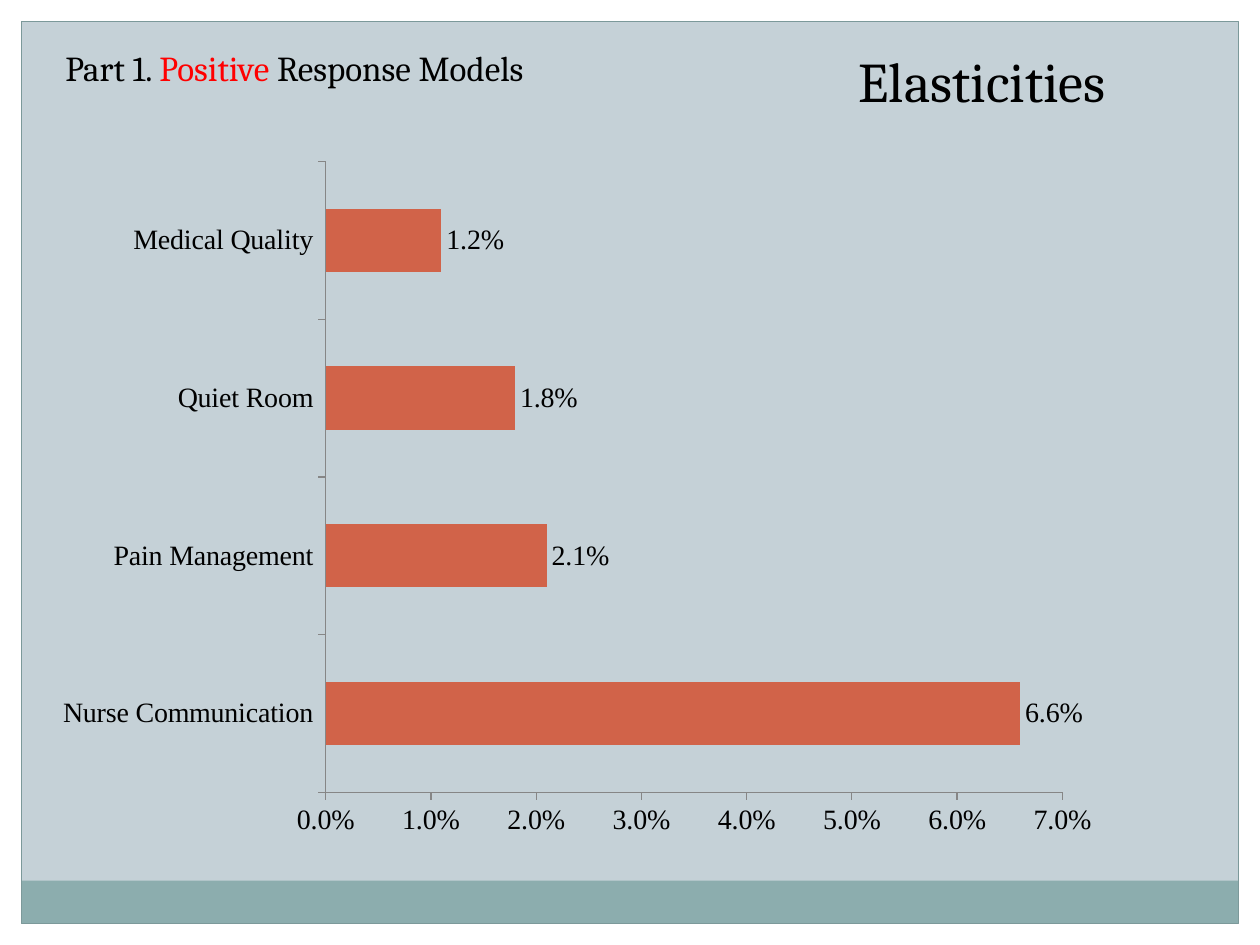
from pptx import Presentation, util as u
from pptx.chart.data import CategoryChartData
from pptx.dml.color import RGBColor
from pptx.enum import chart as ch, shapes, text

W, H, EDGE = 10, 7.5, 0.17
BLACK, GREY = "000000", "868686"


def rgb(code):
    return RGBColor.from_string(code)


def box(slide, x, y, w, h, fill=None, line=None):
    shape = slide.shapes.add_shape(
        shapes.MSO_SHAPE.RECTANGLE, *map(u.Inches, (x, y, w, h)))
    shape.shadow.inherit = False
    if fill:
        shape.fill.solid()
        shape.fill.fore_color.rgb = rgb(fill)
    else:
        shape.fill.background()
    if line:
        shape.line.color.rgb = rgb(line)
        shape.line.width = u.Pt(0.75)
    else:
        shape.line.fill.background()


def label(slide, x, y, w, h, size, runs, align=text.PP_ALIGN.LEFT):
    frame = slide.shapes.add_textbox(*map(u.Inches, (x, y, w, h))).text_frame
    frame.word_wrap = True
    frame.auto_size = text.MSO_AUTO_SIZE.SHAPE_TO_FIT_TEXT
    para = frame.paragraphs[0]
    para.alignment = align
    para.font.size, para.font.name = u.Pt(size), "Cambria"
    for words, color in runs:
        run = para.add_run()
        run.text = words
        run.font.color.rgb = rgb(color)


def style(font):
    font.name, font.size = "Times New Roman", u.Pt(16)
    font.color.rgb = rgb(BLACK)


def bars(slide, x, y, w, h, rows):
    data = CategoryChartData(number_format="0.0%")
    data.categories = list(rows)
    data.add_series("Series 1", rows.values())
    chart = slide.shapes.add_chart(
        ch.XL_CHART_TYPE.BAR_CLUSTERED, *map(u.Inches, (x, y, w, h)), data).chart
    chart.has_legend = chart.has_title = False
    style(chart.font)

    # Axes
    for axis in (chart.category_axis, chart.value_axis):
        axis.has_major_gridlines = False
        axis.major_tick_mark = ch.XL_TICK_MARK.OUTSIDE
        axis.format.line.color.rgb = rgb(GREY)
    scale = chart.value_axis
    scale.minimum_scale, scale.maximum_scale, scale.major_unit = 0, 0.07, 0.01
    scale.tick_labels.number_format = "0.0%"
    scale.tick_labels.number_format_is_linked = False

    # Bars and their values
    plot = chart.plots[0]
    plot.gap_width, plot.vary_by_categories = 150, False
    series = plot.series[0]
    series.format.fill.solid()
    series.format.fill.fore_color.rgb = rgb("D16349")
    marks = series.data_labels
    marks.show_value = True
    marks.number_format, marks.number_format_is_linked = "0.0%", False
    marks.position = ch.XL_LABEL_POSITION.OUTSIDE_END
    style(marks.font)

    # The top bar carries its own wording
    mark = series.points[3].data_label
    run = mark.text_frame.paragraphs[0].add_run()
    run.text = "1.2%"
    style(run.font)
    mark.position = ch.XL_LABEL_POSITION.OUTSIDE_END


def main():
    deck = Presentation()
    deck.slide_width, deck.slide_height = u.Inches(W), u.Inches(H)
    slide = deck.slides.add_slide(deck.slide_layouts[6])
    slide.background.fill.solid()
    slide.background.fill.fore_color.rgb = rgb("C5D1D7")

    # White margin, footer band and frame
    for y in (H - EDGE, 0):
        box(slide, 0, y, W, EDGE, "FFFFFF")
    for x in (W - EDGE, 0):
        box(slide, x, 0, EDGE, H, "FFFFFF")
    inner = W - 2 * EDGE
    box(slide, EDGE, 6.99, inner, 0.34, "8CADAE")
    box(slide, EDGE, EDGE, inner, H - 2 * EDGE, line="7C999A")

    # Headings and chart
    label(slide, 4.42, 0.32, 6.75, 0.64, 32, [("Elasticities", BLACK)],
          text.PP_ALIGN.CENTER)
    bars(slide, 0.33, 1.17, 8.5, 5.58, {
        "Nurse Communication": 0.066,
        "Pain Management": 0.021,
        "Quiet Room": 0.018,
        "Medical Quality": 0.011,
    })
    label(slide, 0.42, 0.32, 4.83, 0.44, 20, [
        ("Part 1. ", BLACK), ("Positive", "FF0000"),
        (" Response Models", BLACK)])
    deck.save("out.pptx")


if __name__ == "__main__":
    main()
